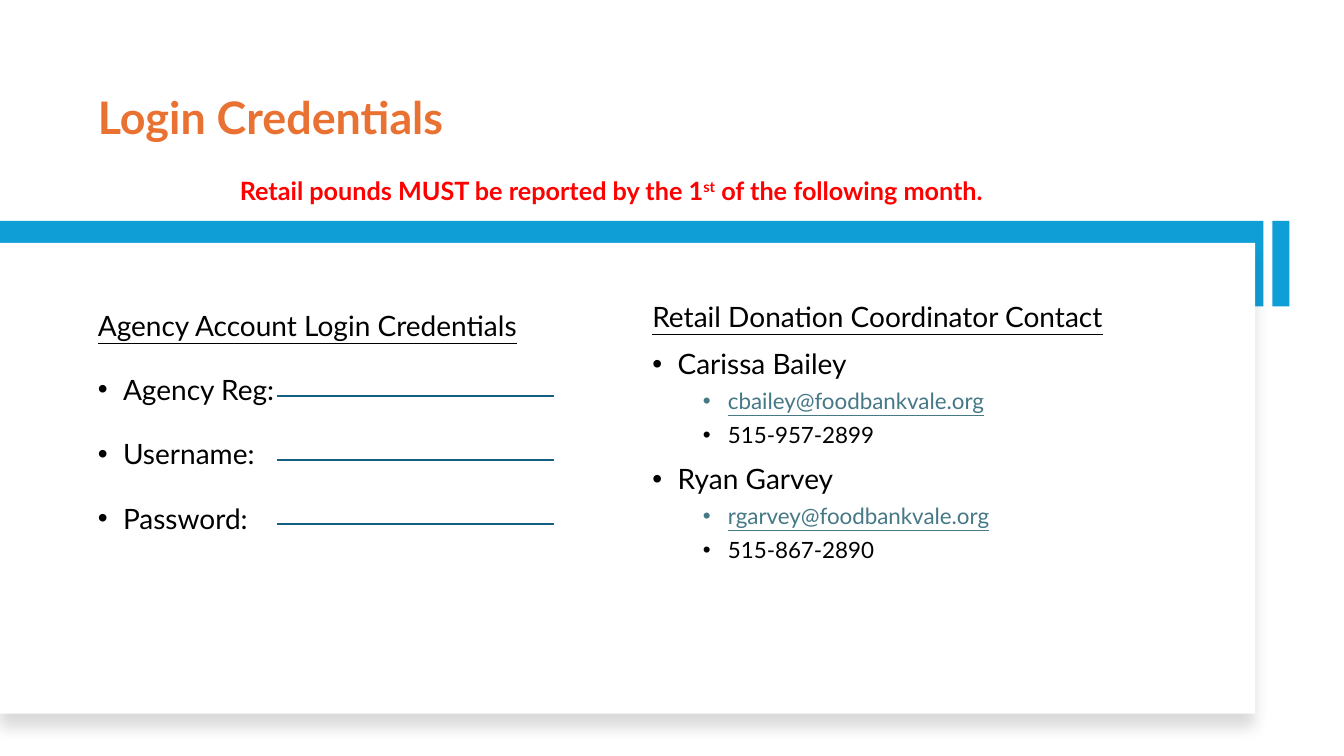
import pptx
import pptx.dml.color
import pptx.enum.shapes
import pptx.enum.text
import pptx.oxml
import pptx.oxml.ns
import pptx.util
from lxml import etree

# Content
TITLE = "Login Credentials"
REMINDER = [("Retail pounds MUST be reported by the 1", False), ("st", True),
            (" of the following month.", False)]
# Each entry: kind of line, text
LOGIN = [("heading", "Agency Account Login Credentials"), ("item", "Agency Reg:"),
         ("item", "Username:"), ("item", "Password:")]
CONTACTS = [("heading", "Retail Donation Coordinator Contact"),
            ("item", "Carissa Bailey"), ("mail", "cbailey@foodbankvale.org"),
            ("phone", "515-957-2899"),
            ("item", "Ryan Garvey"), ("mail", "rgarvey@foodbankvale.org"),
            ("phone", "515-867-2890")]

# Style: size, colour, underline, level, left indent, space before
STYLES = {"heading": (20, "000000", True, 0, 0, 0),
          "item": (20, "000000", False, 0, 0.25, 10),
          "mail": (16, "467886", True, 1, 0.75, 5),
          "phone": (16, "000000", False, 1, 0.75, 5)}
FONT = "Lato"
BLUE, WHITE, TEAL, ORANGE, RED = "0F9ED5", "FFFFFF", "156082", "E97132", "FF0000"

# Layout in inches
WIDTH, HEIGHT = 13.33, 7.5
MARGIN = 0.87
COLUMN_WIDTH, COLUMN_HEIGHT = 4.96, 3.98
COLUMN_GAP = 0.54
BAND_TOP, BAND_HEIGHT = 2.19, 0.85
BLANK_LEFT, BLANK_RIGHT, BLANK_TOP, BLANK_STEP = 2.75, 5.49, 3.93, 0.635

inch = pptx.util.Inches
RECTANGLE = pptx.enum.shapes.MSO_SHAPE.RECTANGLE
qn = pptx.oxml.ns.qn


def colour(value):
    return pptx.dml.color.RGBColor.from_string(value)


def place(shape, left, top, width, height):
    shape.left, shape.top = inch(left), inch(top)
    shape.width, shape.height = inch(width), inch(height)


def set_font(font, size, value, bold=False, underline=False):
    font.name, font.size = FONT, pptx.util.Pt(size)
    font.color.rgb = colour(value)
    font.bold, font.underline = bold, underline


def add_block(page, title, left, top, width, height, fill):
    """Add a plain rectangle behind the placeholders."""
    block = page.shapes.add_shape(RECTANGLE, inch(left), inch(top),
                                  inch(width), inch(height))
    block.shadow.inherit = False
    block.fill.solid()
    block.fill.fore_color.rgb = colour(fill)
    block.line.fill.background()
    title.element.addprevious(block.element)
    return block


def add_soft_shadow(shape):
    effects = shape.element.spPr.find(qn("a:effectLst"))
    shadow = etree.SubElement(effects, qn("a:outerShdw"), blurRad=str(pptx.util.Pt(11)),
                              dist=str(pptx.util.Pt(10)), dir="5400000",
                              algn="t", rotWithShape="0")
    tint = etree.SubElement(shadow, qn("a:srgbClr"), val="000000")
    etree.SubElement(tint, qn("a:alpha"), val="15000")


def set_bullet(para, indent):
    props = para._p.get_or_add_pPr()
    props.set("marL", str(inch(indent)))
    props.set("indent", str(inch(-0.25) if indent else 0))
    if indent:
        etree.SubElement(props, qn("a:buFont"), typeface="Arial")
        etree.SubElement(props, qn("a:buChar"), char="•")
    else:
        etree.SubElement(props, qn("a:buNone"))


def fill_list(box, lines, item_spacing):
    frame = box.text_frame
    frame.auto_size = pptx.enum.text.MSO_AUTO_SIZE.NONE
    for number, (kind, text) in enumerate(lines):
        size, value, underline, level, indent, before = STYLES[kind]
        para = frame.add_paragraph() if number else frame.paragraphs[0]
        para.text, para.level = text, level
        para.line_spacing = 1.5 if kind == "heading" else item_spacing
        para.space_before = pptx.util.Pt(before)
        set_bullet(para, indent)
        set_font(para.font, size, value, underline=underline)


def main():
    deck = pptx.Presentation()
    deck.slide_width, deck.slide_height = inch(WIDTH), inch(HEIGHT)
    two_content = deck.slide_layouts.get_by_name("Two Content")
    page = deck.slides.add_slide(two_content)
    title, login, contacts = list(page.placeholders)[:3]

    # Title
    place(title, MARGIN, 0.66, 11.01, 0.82)
    title.text_frame.auto_size = pptx.enum.text.MSO_AUTO_SIZE.NONE
    title.text_frame.vertical_anchor = pptx.enum.text.MSO_ANCHOR.BOTTOM
    para = title.text_frame.paragraphs[0]
    para.text, para.line_spacing = TITLE, 0.9
    para.alignment = pptx.enum.text.PP_ALIGN.LEFT
    set_font(para.font, 32, ORANGE, bold=True)

    # Blue band, white panel and side bar
    add_block(page, title, 0, BAND_TOP, 12.53, BAND_HEIGHT, BLUE)
    panel = add_block(page, title, 0, 2.41, 12.45, 4.67, WHITE)
    add_soft_shadow(panel)
    add_block(page, title, 12.62, BAND_TOP, 0.17, BAND_HEIGHT, BLUE)

    # Two columns of text
    place(login, MARGIN, 2.84, COLUMN_WIDTH, COLUMN_HEIGHT)
    fill_list(login, LOGIN, 1.5)
    place(contacts, MARGIN + COLUMN_WIDTH + COLUMN_GAP, 2.75, COLUMN_WIDTH, COLUMN_HEIGHT)
    fill_list(contacts, CONTACTS, 1.0)

    # Blanks to fill in, one per login item
    for row in range(len(LOGIN) - 1):
        y = inch(BLANK_TOP + row * BLANK_STEP)
        blank = page.shapes.add_connector(pptx.enum.shapes.MSO_CONNECTOR.STRAIGHT,
                                          inch(BLANK_LEFT), y, inch(BLANK_RIGHT), y)
        blank.line.color.rgb = colour(TEAL)
        blank.line.width = pptx.util.Pt(1.5)
        etree.SubElement(blank.element.spPr, qn("a:effectLst"))

    # Reminder above the band
    box = page.shapes.add_textbox(inch(2.28), inch(1.69), inch(8.78), inch(0.4))
    box.text_frame.word_wrap = True
    para = box.text_frame.paragraphs[0]
    set_font(para.font, 18, RED, bold=True)
    for text, raised in REMINDER:
        span = para.add_run()
        span.text = text
        if raised:
            span._r.get_or_add_rPr().set("baseline", "30000")

    # Leave no empty placeholder
    for holder in list(page.placeholders):
        if not holder.text_frame.text:
            holder.element.getparent().remove(holder.element)

    deck.save("out.pptx")


if __name__ == "__main__":
    main()
